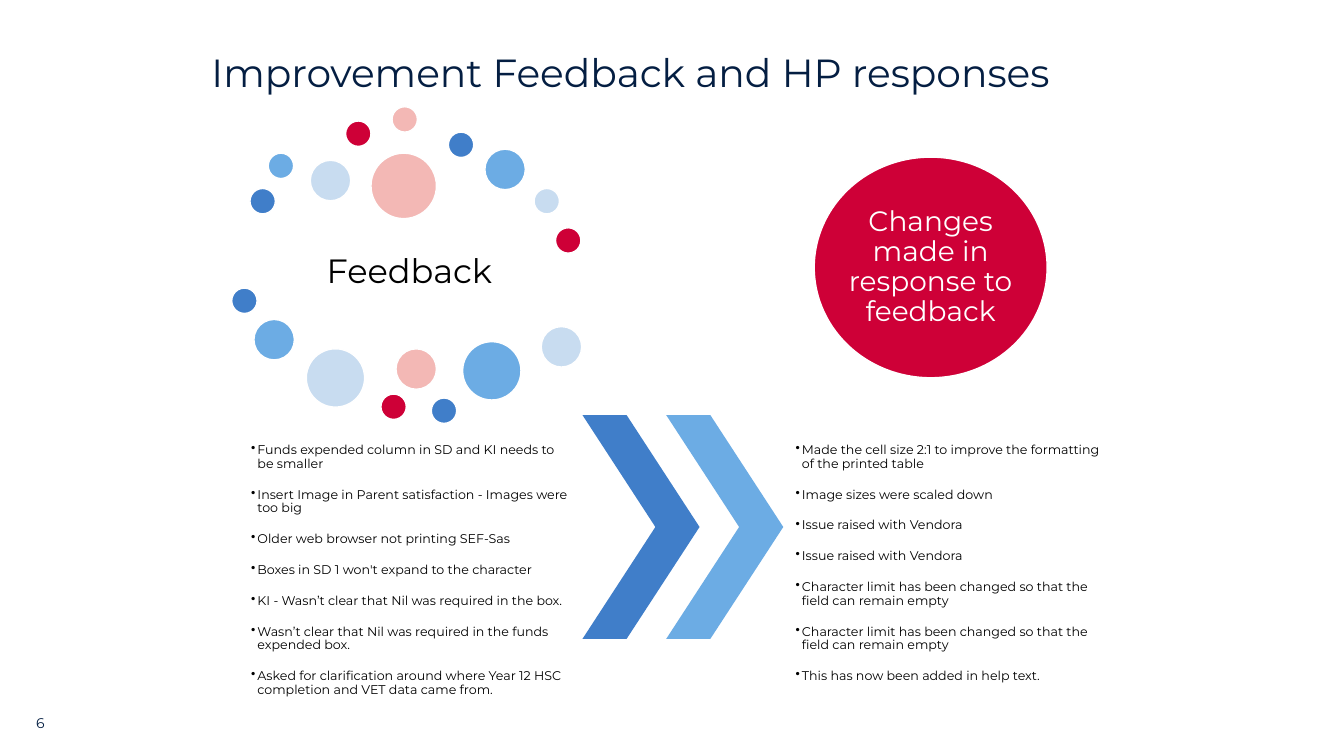
import itertools

import pptx
import pptx.dml.color
import pptx.enum.shapes
import pptx.enum.text
import pptx.oxml
import pptx.oxml.ns
import pptx.util

Cm, Pt = pptx.util.Cm, pptx.util.Pt
SHAPE = pptx.enum.shapes.MSO_SHAPE
ANCHOR = pptx.enum.text.MSO_ANCHOR
ALIGN = pptx.enum.text.PP_ALIGN

COLORS = {
    "navy": "041E42", "black": "000000", "white": "FFFFFF",
    "blue": "407EC9", "sky": "6CACE4", "pale": "C8DCF0",
    "red": "CE0037", "pink": "F3B8B5",
}
BUBBLE_COLORS = ("blue", "sky", "pale", "red", "pink")
BUBBLE_SIZES = {"S": 0.64, "M": 1.02, "L": 1.47, "XL": 1.65}

# Left, top (cm) and size of each bubble around the feedback heading
BUBBLES = [
    (6.3, 4.75, "S"), (6.76, 3.86, "S"), (7.82, 4.04, "M"),
    (8.71, 3.05, "S"), (9.88, 2.69, "S"), (11.3, 3.33, "S"),
    (12.22, 3.76, "M"), (13.46, 4.75, "S"), (14, 5.74, "S"),
    (9.35, 3.86, "XL"), (5.84, 7.26, "S"), (6.4, 8.05, "M"),
    (7.72, 8.79, "L"), (9.6, 9.93, "S"), (9.98, 8.79, "M"),
    (10.87, 10.03, "S"), (11.66, 8.61, "L"), (13.64, 8.23, "M"),
]

FEEDBACK = [
    "Funds expended column in SD and KI needs to be smaller",
    "Insert Image in Parent satisfaction - Images were too big",
    "Older web browser not printing SEF-Sas",
    "Boxes in SD 1 won't expand to the character",
    "KI - Wasn’t clear that Nil was required in the box.",
    "Wasn’t clear that Nil was required in the funds expended box.",
    "Asked for clarification around where Year 12 HSC completion and VET data came from.",
]
RESPONSES = [
    "Made the cell size 2:1 to improve the formatting of the printed table",
    "Image sizes were scaled down",
    "Issue raised with Vendora",
    "Issue raised with Vendora",
    "Character limit has been changed so that the field can remain empty",
    "Character limit has been changed so that the field can remain empty",
    "This has now been added in help text.",
]


class FeedbackSlide:
    font_name = "Montserrat"
    bullet_indent = Cm(0.16)
    bullet_gap = Pt(12.3)

    def __init__(self, slide):
        self.slide = slide

    def color(self, name):
        return pptx.dml.color.RGBColor.from_string(COLORS[name])

    def apply(self, target, formats):
        for attribute, value in formats.items():
            setattr(target, attribute, value)

    def set_lines(self, frame, lines, size, color, anchor=ANCHOR.TOP, align=ALIGN.LEFT,
                  inset=0, spacing=0.9, bullets=False):
        margin = Cm(inset)
        self.apply(frame, {
            "word_wrap": True, "vertical_anchor": anchor,
            "margin_left": margin, "margin_right": margin,
            "margin_top": margin, "margin_bottom": margin,
        })
        for index, line in enumerate(lines):
            paragraph = frame.add_paragraph() if index else frame.paragraphs[0]
            paragraph.text = line
            self.apply(paragraph, {"alignment": align, "line_spacing": spacing})
            if bullets:
                paragraph.space_after = self.bullet_gap
                self.add_bullet(paragraph)
            self.apply(paragraph.font, {"name": self.font_name, "size": Pt(size)})
            paragraph.font.color.rgb = self.color(color)

    def add_bullet(self, paragraph):
        properties = paragraph._p.get_or_add_pPr()
        properties.set("marL", str(self.bullet_indent))
        properties.set("indent", str(-self.bullet_indent))
        namespace = pptx.oxml.ns.nsdecls("a")
        properties.append(pptx.oxml.parse_xml(f'<a:buChar {namespace} char="•"/>'))

    def text(self, box, lines, size, color, **formats):
        area = self.slide.shapes.add_textbox(*map(Cm, box))
        self.set_lines(area.text_frame, lines, size, color, **formats)

    def shape(self, kind, box, fill, outlined=False):
        shape = self.slide.shapes.add_shape(kind, *map(Cm, box))
        shape.shadow.inherit = False
        shape.fill.solid()
        shape.fill.fore_color.rgb = self.color(fill)
        if outlined:
            shape.line.color.rgb = self.color("white")
            shape.line.width = Pt(1)
        else:
            shape.line.fill.background()
        return shape

    def circle(self, box, fill):
        return self.shape(SHAPE.OVAL, box, fill, outlined=True)

    def chevron(self, box, fill):
        self.shape(SHAPE.CHEVRON, box, fill).adjustments[0] = 0.623

    def bullet_list(self, box, items):
        self.text(box, items, 9, "black", inset=0.03, bullets=True)


def main():
    deck = pptx.Presentation()
    deck.slide_width, deck.slide_height = Cm(33.87), Cm(19.05)
    page = FeedbackSlide(deck.slides.add_slide(deck.slide_layouts[6]))

    # Title and page number
    page.text((5.33, 1.19, 23.95, 1.4), ["Improvement Feedback and HP responses"],
              28, "navy", anchor=ANCHOR.MIDDLE)
    page.text((0.91, 17.4, 1.14, 1.02), ["6"], 10, "navy",
              anchor=ANCHOR.BOTTOM, spacing=1.0)

    # Feedback heading, list and ring of bubbles
    page.text((6.3, 5.56, 8.03, 2.64), ["Feedback"], 24, "black",
              anchor=ANCHOR.MIDDLE, align=ALIGN.CENTER, inset=0.08)
    page.bullet_list((6.3, 11.15, 8.03, 4.95), FEEDBACK)
    for (left, top, size), color in zip(BUBBLES, itertools.cycle(BUBBLE_COLORS)):
        diameter = BUBBLE_SIZES[size]
        page.circle((left, top, diameter, diameter), color)

    # Chevrons leading from feedback to responses
    for left, color in ((14.68, "blue"), (16.79, "sky")):
        page.chevron((left, 10.46, 2.95, 5.64), color)

    # Responses
    changes = page.circle((20.52, 3.96, 5.87, 5.56), "red")
    page.set_lines(changes.text_frame, ["Changes made in response to feedback"], 20,
                   "white", anchor=ANCHOR.MIDDLE, align=ALIGN.CENTER)
    page.bullet_list((20.02, 11.15, 8.05, 4.95), RESPONSES)

    deck.save("out.pptx")


if __name__ == "__main__":
    main()
